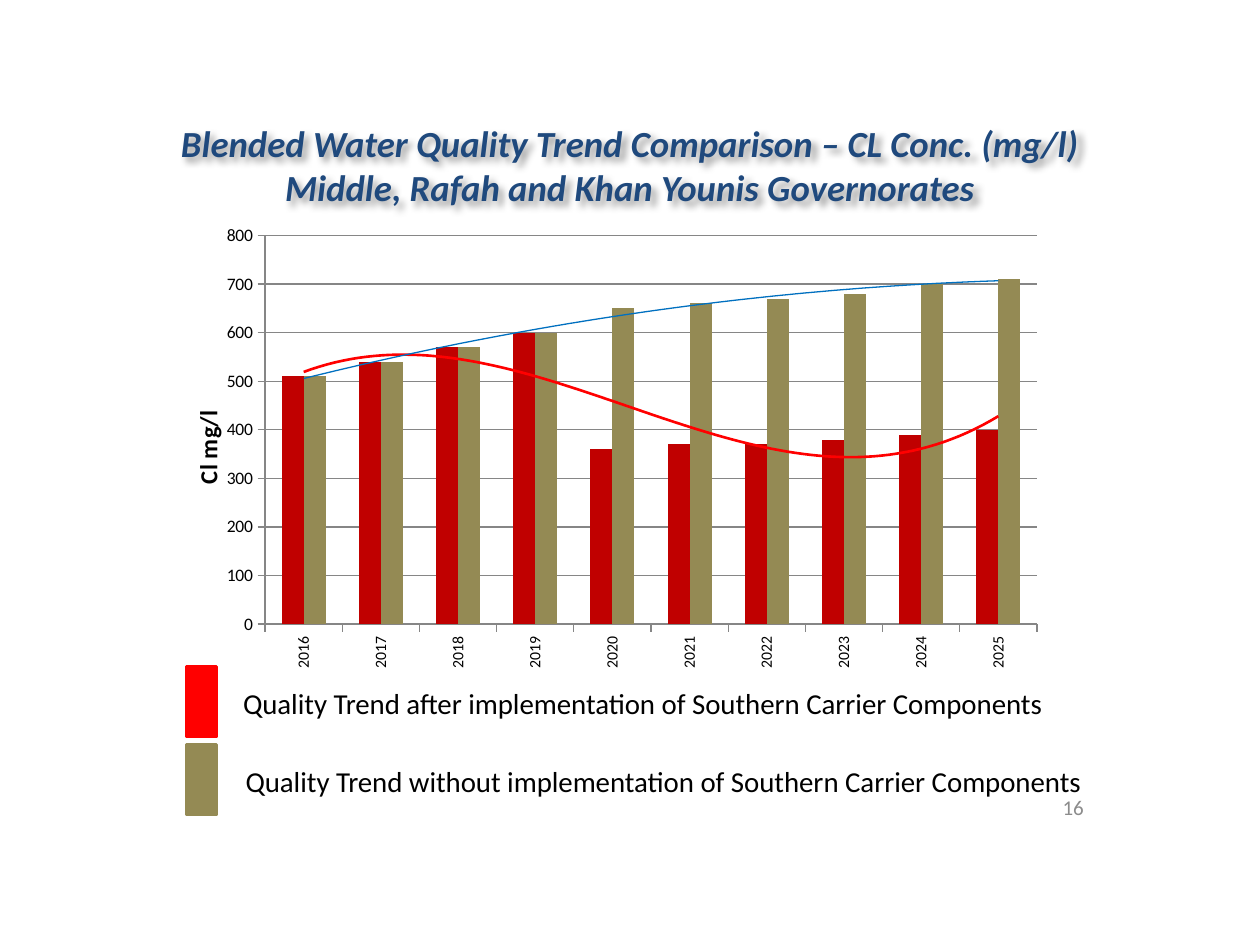
from typing import NamedTuple

from lxml.etree import SubElement
from pptx import Presentation
from pptx.chart.data import CategoryChartData
from pptx.dml.color import RGBColor
from pptx.enum.chart import XL_CHART_TYPE, XL_TICK_MARK
from pptx.enum.shapes import MSO_SHAPE
from pptx.enum.text import MSO_ANCHOR, PP_ALIGN
from pptx.oxml import parse_xml
from pptx.oxml.ns import nsdecls, qn
from pptx.util import Pt

FONT = "Calibri"
BLACK = RGBColor(0x00, 0x00, 0x00)
GREY = RGBColor(0x8C, 0x8C, 0x8C)
AXIS_GREY = RGBColor(0x86, 0x86, 0x86)
NAVY = RGBColor(0x1F, 0x49, 0x7D)
RED = RGBColor(0xFF, 0x00, 0x00)
DARK_RED = RGBColor(0xC0, 0x00, 0x00)
BLUE = RGBColor(0x00, 0x70, 0xC0)
OLIVE = RGBColor(0x94, 0x8A, 0x54)


class Box(NamedTuple):
    left: float
    top: float
    width: float
    height: float

    def emu(self):
        return [Pt(v) for v in self]


class Style(NamedTuple):
    size: float
    color: RGBColor
    bold: bool = False
    italic: bool = False


class Trend(NamedTuple):
    name: str
    values: list[int]
    fill: RGBColor
    order: int
    color: RGBColor
    width: float


class Key(NamedTuple):
    text: str
    color: RGBColor
    swatch_top: float
    text_box: Box


CHART = Box(101.4, 112.3, 509.8, 323.3)
PLOT = Box(151.5, 134.6, 441.1, 222.1)
TRENDS = [
    Trend("Series 1", [510, 540, 570, 600, 360, 370, 370, 380, 390, 400],
          DARK_RED, 3, RED, 1.5),
    Trend("Series 2", [510, 540, 570, 600, 650, 660, 670, 680, 700, 710],
          OLIVE, 2, BLUE, 0.75),
]
KEYS = [
    Key("Quality Trend after implementation of Southern Carrier Components",
        RED, 380.9, Box(131.8, 388.1, 477.4, 27.4)),
    Key("Quality Trend without implementation of Southern Carrier Components",
        OLIVE, 425.5, Box(133.2, 432.7, 497.5, 27.4)),
]
TITLE = [
    "Blended Water Quality Trend Comparison – CL Conc. (mg/l)",
    "Middle, Rafah and Khan Younis Governorates",
]


def set_font(font, style: Style) -> None:
    font.name, font.size = FONT, Pt(style.size)
    font.bold, font.italic = style.bold, style.italic
    font.color.rgb = style.color


def add_text(slide, box: Box, lines: list[str], style: Style,
             align=PP_ALIGN.LEFT, wrap: bool = True):
    sp = slide.shapes.add_textbox(*box.emu())
    tf = sp.text_frame
    tf.word_wrap = wrap
    for i, line in enumerate(lines):
        p = tf.paragraphs[0] if i == 0 else tf.add_paragraph()
        p.alignment = align
        r = p.add_run()
        r.text = line
        set_font(r.font, style)
    return sp


def add_shadow(sp) -> None:
    sp.element.spPr.append(parse_xml(
        f'<a:effectLst {nsdecls("a")}><a:outerShdw blurRad="50800" '
        'dist="38100" dir="2700000" algn="tl" rotWithShape="0">'
        '<a:srgbClr val="000000"><a:alpha val="40000"/></a:srgbClr>'
        '</a:outerShdw></a:effectLst>'))


def make_layout(**parts):
    layout = parse_xml(f'<c:layout {nsdecls("c")}><c:manualLayout/></c:layout>')
    for tag, value in parts.items():
        SubElement(layout[0], qn(f"c:{tag}")).set("val", str(value))
    return layout


def add_trendline(ser, trend: Trend) -> None:
    ser.find(qn("c:cat")).addprevious(parse_xml(
        f'<c:trendline {nsdecls("c", "a")}><c:spPr>'
        f'<a:ln w="{Pt(trend.width)}"><a:solidFill>'
        f'<a:srgbClr val="{trend.color}"/></a:solidFill></a:ln></c:spPr>'
        f'<c:trendlineType val="poly"/><c:order val="{trend.order}"/>'
        '<c:dispRSqr val="0"/><c:dispEq val="0"/></c:trendline>'))


def style_axis(axis, size: float) -> None:
    axis.major_tick_mark = XL_TICK_MARK.OUTSIDE
    axis.minor_tick_mark = XL_TICK_MARK.NONE
    axis.format.line.color.rgb = AXIS_GREY
    axis.format.line.width = Pt(0.75)
    set_font(axis.tick_labels.font, Style(size, BLACK))


def add_quality_chart(slide, box: Box, inner: Box) -> None:
    data = CategoryChartData(number_format="#,##0")
    data.categories = [str(year) for year in range(2016, 2026)]
    for trend in TRENDS:
        data.add_series(trend.name, trend.values)
    chart = slide.shapes.add_chart(
        XL_CHART_TYPE.COLUMN_CLUSTERED, *box.emu(), data).chart
    chart.has_title = chart.has_legend = False
    set_font(chart.font, Style(10, BLACK))

    # Columns and trend lines
    plot = chart.plots[0]
    plot.gap_width, plot.overlap, plot.vary_by_categories = 150, 0, False
    sers = chart.element.xpath(".//c:ser")
    for series, ser, trend in zip(plot.series, sers, TRENDS):
        series.format.fill.solid()
        series.format.fill.fore_color.rgb = trend.fill
        series.invert_if_negative = False
        add_trendline(ser, trend)

    # Axes
    years, levels = chart.category_axis, chart.value_axis
    style_axis(years, 9)
    chart.element.xpath(".//c:catAx/c:txPr/a:bodyPr")[0].set("rot", "-5400000")
    style_axis(levels, 10)
    levels.minimum_scale, levels.maximum_scale, levels.major_unit = 0, 800, 100
    levels.tick_labels.number_format = "#,##0"
    levels.tick_labels.number_format_is_linked = False
    levels.has_major_gridlines = True
    levels.major_gridlines.format.line.color.rgb = AXIS_GREY
    levels.major_gridlines.format.line.width = Pt(0.75)
    r = levels.axis_title.text_frame.paragraphs[0].add_run()
    r.text = "Cl mg/l"
    set_font(r.font, Style(14, BLACK, bold=True))

    # Axis title left of the numbers, plot at its fixed place
    title = levels.axis_title.element
    area = chart.element.xpath("c:chart/c:plotArea")[0]
    for parent in (title, area):
        for old in parent.findall(qn("c:layout")):
            parent.remove(old)
    title.find(qn("c:tx")).addnext(
        make_layout(xMode="edge", yMode="edge", x=0.01, y=0.37))
    area.insert(0, make_layout(
        layoutTarget="inner", xMode="edge", yMode="edge",
        x=(inner.left - box.left) / box.width,
        y=(inner.top - box.top) / box.height,
        w=inner.width / box.width, h=inner.height / box.height))


def add_key(slide, key: Key) -> None:
    sp = slide.shapes.add_shape(
        MSO_SHAPE.RECTANGLE, *Box(106.6, key.swatch_top, 17.3, 39.6).emu())
    sp.shadow.inherit = False
    sp.fill.solid()
    sp.fill.fore_color.rgb = key.color
    sp.line.color.rgb = key.color
    sp.line.width = Pt(2)
    add_text(slide, key.text_box, [key.text], Style(16.5, BLACK), wrap=False)


def main() -> None:
    prs = Presentation()
    prs.slide_width, prs.slide_height = Pt(720), Pt(540)
    slide = prs.slides.add_slide(prs.slide_layouts[6])

    add_quality_chart(slide, CHART, PLOT)

    # Slide number
    sp = add_text(slide, Box(581.8, 450.7, 44.6, 21.6), ["16"],
                  Style(12, GREY), PP_ALIGN.RIGHT)
    sp.text_frame.vertical_anchor = MSO_ANCHOR.MIDDLE

    # Title
    sp = add_text(slide, Box(90, 67, 540, 55.4), TITLE,
                  Style(21, NAVY, bold=True, italic=True), PP_ALIGN.CENTER)
    tf = sp.text_frame
    tf.margin_left = tf.margin_right = Pt(4.3)
    tf.margin_top = tf.margin_bottom = Pt(2.2)
    add_shadow(sp)

    # Legend
    for key in KEYS:
        add_key(slide, key)

    prs.save("out.pptx")


if __name__ == "__main__":
    main()
